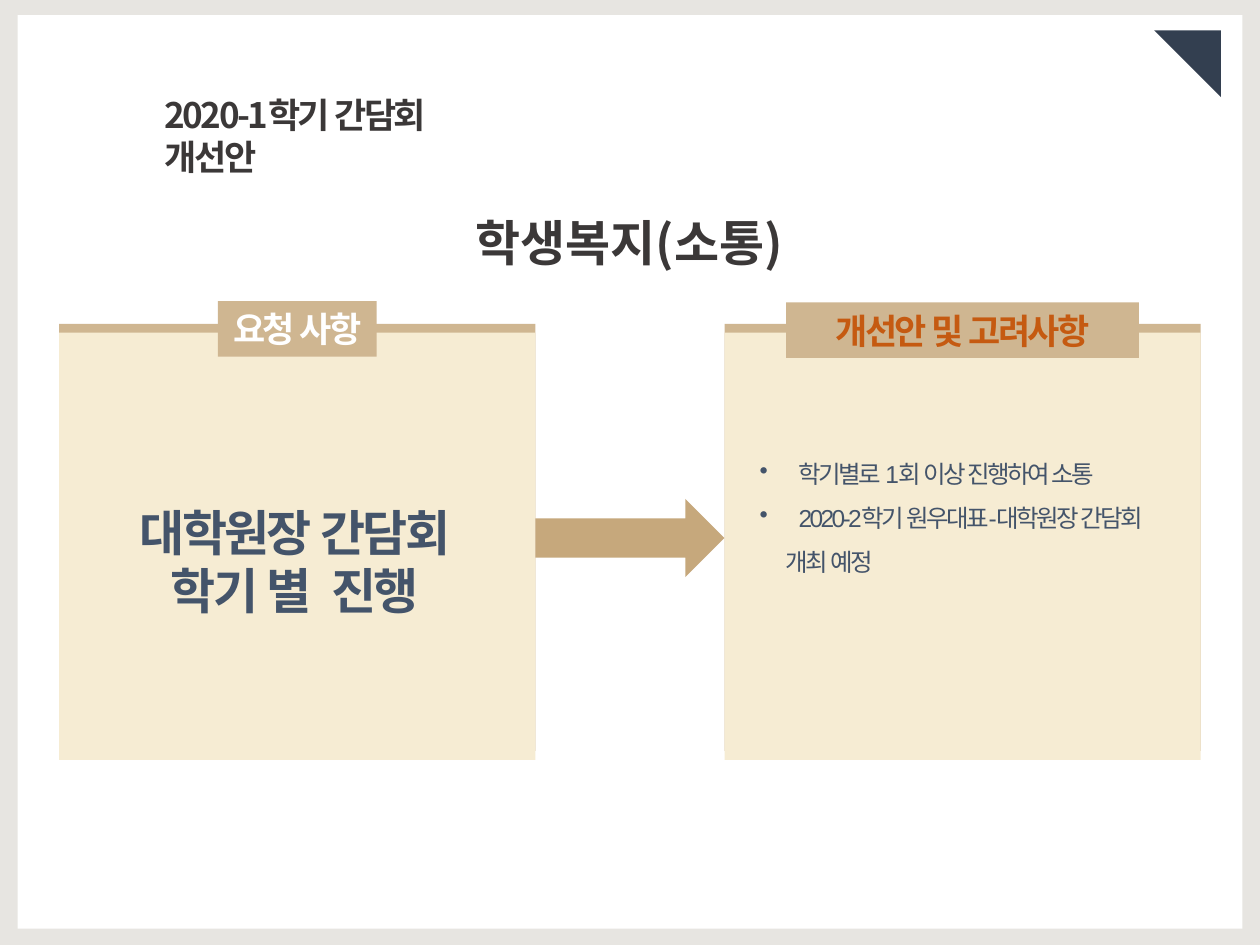
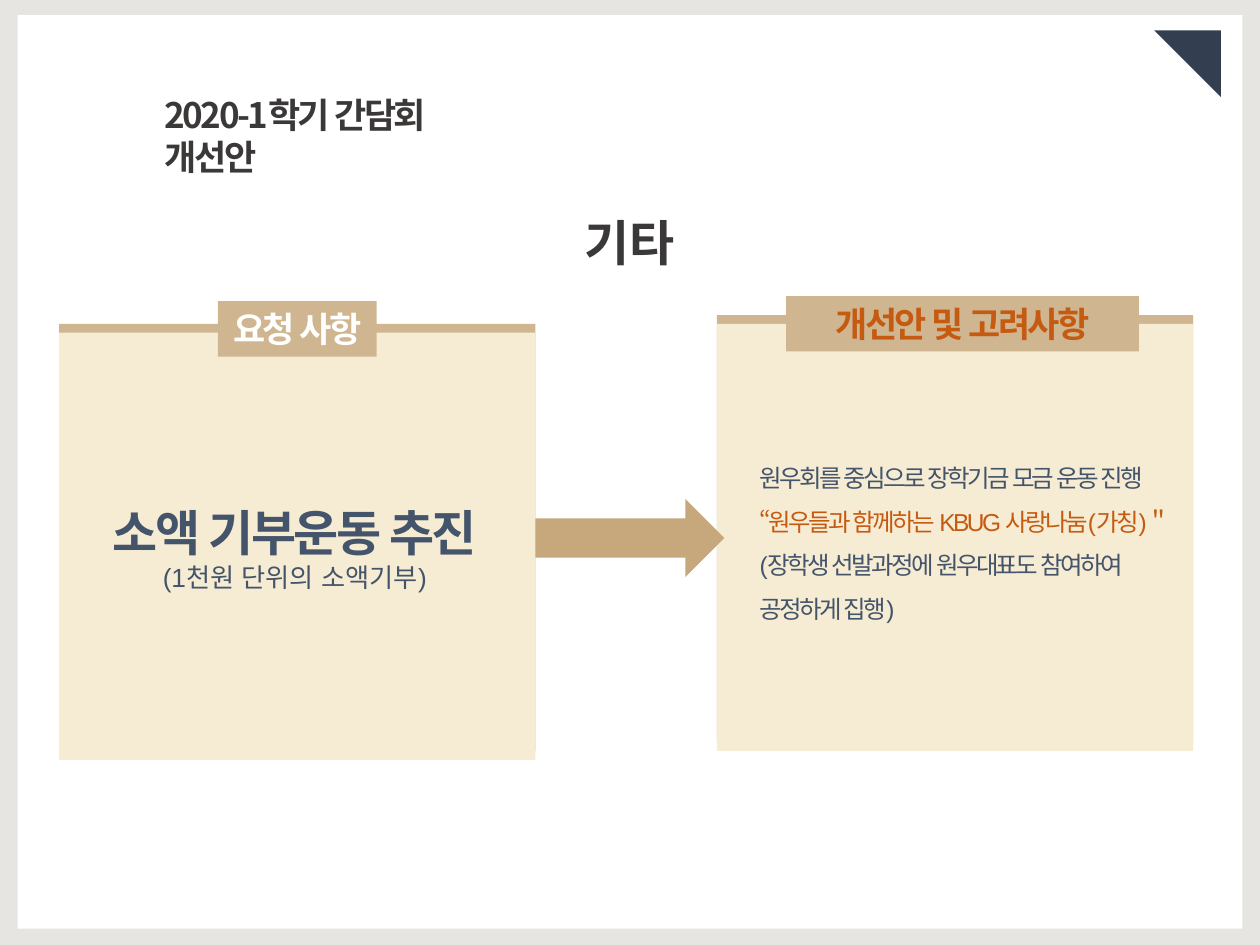
from lxml import etree
from pptx import Presentation
from pptx.dml.color import RGBColor
from pptx.enum import lang, shapes, text
from pptx.oxml import ns
from pptx.util import Inches, Pt

PAPER = RGBColor(0xE7, 0xE5, 0xE1)
WHITE = RGBColor(0xFF, 0xFF, 0xFF)
NAVY = RGBColor(0x33, 0x3F, 0x50)
SLATE = RGBColor(0x44, 0x54, 0x6A)
CHARCOAL = RGBColor(0x3B, 0x38, 0x38)
TAN = RGBColor(0xCF, 0xB6, 0x91)
CREAM = RGBColor(0xF6, 0xEC, 0xD3)
ARROW = RGBColor(0xC6, 0xA8, 0x7C)
ORANGE = RGBColor(0xC5, 0x5A, 0x11)
KOREAN = "Noto Sans CJK KR"
RECT = shapes.MSO_SHAPE.RECTANGLE
CENTER = text.PP_ALIGN.CENTER
LEFT = text.PP_ALIGN.LEFT

CARD_W, CARD_H, BAND_H, TAG_H = 3.78, 3.39, 0.07, 0.44

# Request lines: wording, size, colour, bold, tracking, line pitch
# Answer lines: wording, colour, left margin, bulleted
topics = [
    {
        "subject": "학생복지(소통)",
        "request": [
            ("대학원장 간담회", 28, SLATE, True, -1.5, 33),
            ("학기 별  진행", 28, SLATE, True, -1.5, 33),
        ],
        "answer_card": (5.75, 2.57),
        "answer_tag_top": 2.4,
        "answer_top": 3.48,
        "answer": [
            ("학기별로 1회 이상 진행하여 소통", SLATE, 0.31, True),
            ("2020-2학기 원우대표-대학원장 간담회", SLATE, 0.31, True),
            ("개최 예정", SLATE, 0.21, False),
        ],
    },
    {
        "subject": "기타",
        "request": [
            ("소액 기부운동 추진", 28, SLATE, True, -1.5, 33),
            ("(1천원 단위의 소액기부)", 15, SLATE, False, 0, 18),
        ],
        "answer_card": (5.69, 2.5),
        "answer_tag_top": 2.35,
        "answer_top": 3.51,
        "answer": [
            ("원우회를 중심으로 장학기금 모금 운동 진행", SLATE, 0, False),
            ("“원우들과 함께하는 KBUG 사랑나눔(가칭)＂", ORANGE, 0, False),
            ("(장학생 선발과정에 원우대표도 참여하여", SLATE, 0, False),
            ("공정하게 집행)", SLATE, 0, False),
        ],
    },
]


def add_block(slide, kind, left, top, width, height, fill):
    block = slide.shapes.add_shape(
        kind, Inches(left), Inches(top), Inches(width), Inches(height))
    block.shadow.inherit = False
    block.fill.solid()
    block.fill.fore_color.rgb = fill
    block.line.fill.background()
    return block


def write(shape, lines, font, align, anchor=text.MSO_ANCHOR.TOP):
    """Fill a shape with one paragraph per (wording, size, colour, bold, tracking, pitch)."""
    frame = shape.text_frame
    frame.word_wrap = True
    frame.auto_size = text.MSO_AUTO_SIZE.NONE
    frame.vertical_anchor = anchor
    frame.text = "\n".join(line[0] for line in lines)
    for paragraph, (_, size, color, bold, tracking, pitch) in zip(frame.paragraphs, lines):
        paragraph.alignment = align
        paragraph.line_spacing = Pt(pitch)
        paragraph.space_before = Pt(0)
        paragraph.font.size = Pt(size)
        paragraph.font.bold = bold
        paragraph.font.color.rgb = color
        paragraph.font.name = font
        for run in paragraph.runs:
            run.font.language_id = lang.MSO_LANGUAGE_ID.KOREAN
            properties = run.font._element
            properties.set("spc", str(int(tracking * 100)))
            etree.SubElement(properties, ns.qn("a:ea"), typeface=KOREAN)


prs = Presentation()
prs.slide_width, prs.slide_height = Inches(10), Inches(7.5)
background = prs.slide_master.background.fill
background.solid()
background.fore_color.rgb = PAPER
layout = prs.slide_layouts[5]

for topic in topics:
    slide = prs.slides.add_slide(layout)

    # The sheet and its corner belong to the layout, so both slides share them
    if topic is topics[0]:
        sheet = add_block(slide, RECT, 0.14, 0.12, 9.72, 7.25, WHITE)
        corner = add_block(slide, shapes.MSO_SHAPE.RIGHT_TRIANGLE, 9.16, 0.24, 0.53, 0.53, NAVY)
        corner.rotation = 180
        first_placeholder = layout.shapes[0].element
        for number, art in enumerate((sheet, corner), start=101):
            art.element.nvSpPr.cNvPr.id = number
            first_placeholder.addprevious(art.element)

    subject = slide.shapes.title
    subject.left, subject.top = Inches(2.68), Inches(1.54)
    subject.width, subject.height = Inches(4.63), Inches(0.62)
    write(subject, [(topic["subject"], 28, CHARCOAL, True, 0, 40.5)], KOREAN, CENTER)

    meeting = slide.shapes.add_textbox(Inches(1.21), Inches(0.69), Inches(2.7), Inches(0.78))
    write(meeting, [("2020-1학기 간담회 개선안", 20, CHARCOAL, True, -1.5, 24)], KOREAN, LEFT)

    for left, top in ((0.47, 2.57), topic["answer_card"]):
        add_block(slide, RECT, left, top, CARD_W, CARD_H, TAN)
        add_block(slide, RECT, left, top + BAND_H, CARD_W, CARD_H, CREAM)

    tags = [
        ("요청 사항", 1.73, 2.39, 1.26, WHITE),
        ("개선안 및 고려사항", 6.24, topic["answer_tag_top"], 2.8, ORANGE),
    ]
    for wording, left, top, width, color in tags:
        tag = add_block(slide, RECT, left, top, width, TAG_H, TAN)
        tag.text_frame.margin_left = tag.text_frame.margin_right = Inches(0.05)
        write(tag, [(wording, 20, color, True, -1.5, 24)], KOREAN, CENTER,
              text.MSO_ANCHOR.MIDDLE)

    request = slide.shapes.add_textbox(Inches(0.33), Inches(3.95), Inches(4.02), Inches(1.04))
    write(request, topic["request"], "Arial", CENTER)

    answer = slide.shapes.add_textbox(
        Inches(5.93), Inches(topic["answer_top"]), Inches(3.9), Inches(1.51))
    write(answer, [(wording, 14, color, False, -1.5, 25)
                   for wording, color, _, _ in topic["answer"]], "Arial", LEFT)
    for paragraph, (_, _, margin, bulleted) in zip(answer.text_frame.paragraphs, topic["answer"]):
        properties = paragraph._p.get_or_add_pPr()
        properties.set("marL", str(Inches(margin)))
        properties.set("indent", str(-Inches(margin) if bulleted else 0))
        if bulleted:
            bullet = etree.Element(ns.qn("a:buChar"), char="•")
            properties.find(ns.qn("a:defRPr")).addprevious(bullet)

    add_block(slide, shapes.MSO_SHAPE.RIGHT_ARROW, 4.25, 3.96, 1.5, 0.62, ARROW)

prs.save("out.pptx")
